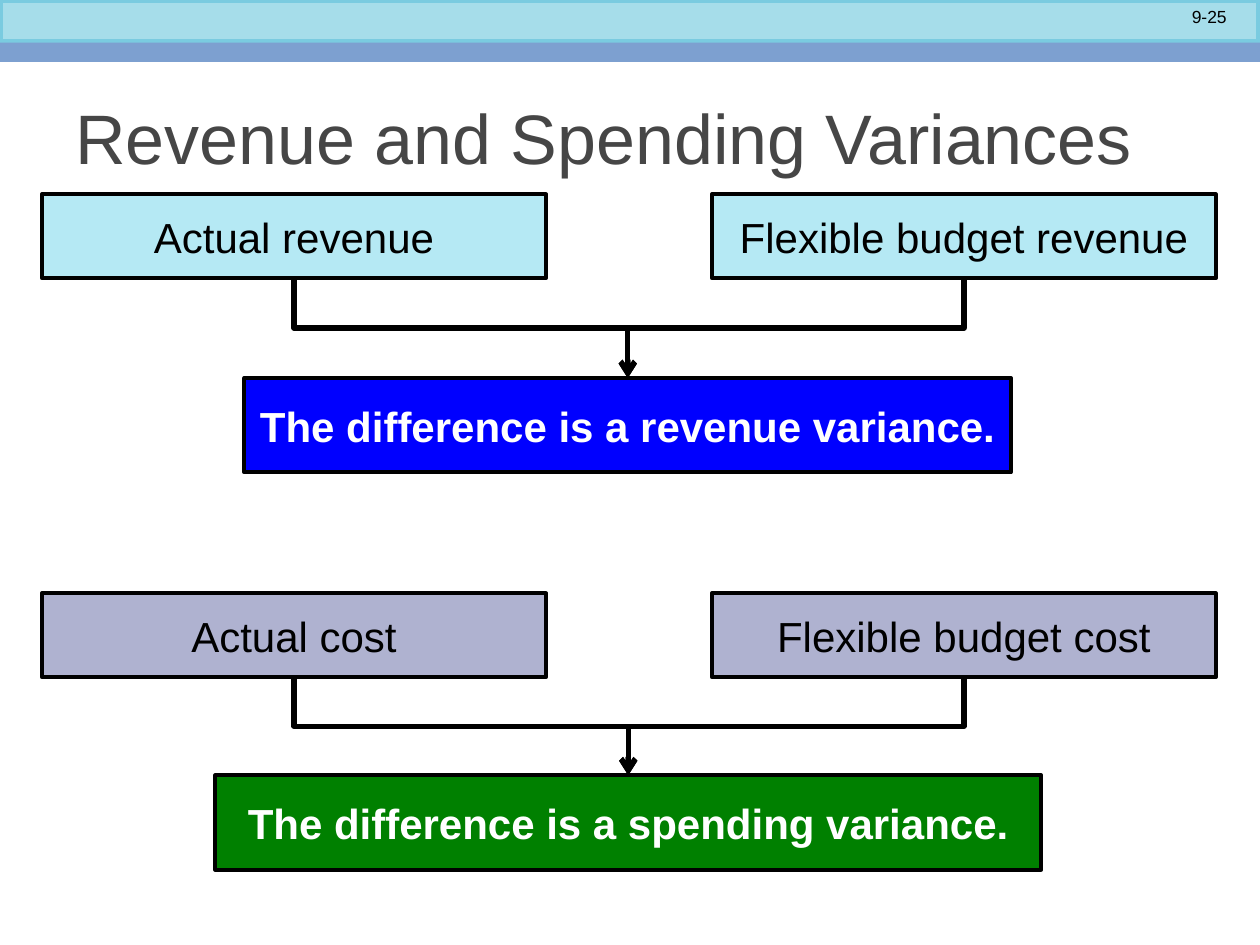
from lxml.etree import SubElement
from pptx import Presentation
from pptx.dml.color import RGBColor
from pptx.enum.shapes import MSO_CONNECTOR as Link, MSO_SHAPE as Preset
from pptx.enum.text import MSO_ANCHOR as Anchor, PP_ALIGN as Align
from pptx.oxml.ns import qn
from pptx.util import Pt

BOTTOM, TOP = 2, 0  # connection sites of a rectangle


def color(code):
    return RGBColor.from_string(code)


def apply(target, values):
    for name, value in values.items():
        setattr(target, name, value)


class VarianceSlide:
    font = "Arial"
    ink = "000000"
    border = 2.25
    link_width = 3

    def __init__(self, deck):
        self.shapes = deck.slides.add_slide(deck.slide_layouts[6]).shapes

    def set_text(self, shape, text, size, ink, align, anchor=Anchor.MIDDLE, bold=False):
        frame = shape.text_frame
        apply(frame, {"word_wrap": True, "vertical_anchor": anchor})
        paragraph = frame.paragraphs[0]
        paragraph.alignment = align
        run = paragraph.add_run()
        run.text = text
        apply(run.font, {"name": self.font, "size": Pt(size), "bold": bold})
        run.font.color.rgb = color(ink)

    def label(self, area, text, size, ink, align, anchor):
        box = self.shapes.add_textbox(*map(Pt, area))
        self.set_text(box, text, size, ink, align, anchor)

    def panel(self, area, fill, line=None, width=0):
        rect = self.shapes.add_shape(Preset.RECTANGLE, *map(Pt, area))
        rect.shadow.inherit = False
        rect.fill.solid()
        rect.fill.fore_color.rgb = color(fill)
        if line:
            rect.line.color.rgb = color(line)
            rect.line.width = Pt(width)
        else:
            rect.line.fill.background()
        return rect

    def box(self, area, text, fill, ink=ink, bold=False):
        rect = self.panel(area, fill, self.ink, self.border)
        self.set_text(rect, text, 24, ink, Align.CENTER, bold=bold)
        return rect

    def elbow(self, source, result):
        link = self.shapes.add_connector(Link.ELBOW, 0, 0, 0, 0)
        link.begin_connect(source, BOTTOM)
        link.end_connect(result, TOP)
        rightward = link.begin_x < link.end_x
        center_x = (link.begin_x + link.end_x) // 2
        center_y = (link.begin_y + link.end_y) // 2
        across, down = link.width, link.height
        # A quarter turn makes the elbow leave downwards
        apply(link, {"left": center_x - down // 2, "top": center_y - across // 2,
                     "width": down, "height": across})
        properties = link._element.spPr
        apply(properties.xfrm, {"rot": 270 if rightward else 90,
                                "flipH": rightward, "flipV": False})
        link.line.color.rgb = color(self.ink)
        link.line.width = Pt(self.link_width)
        SubElement(link.line._get_or_add_ln(), qn("a:tailEnd"), type="arrow")
        SubElement(properties, qn("a:effectLst"))

    def comparison(self, top, sources, fill, result_area, result, result_fill):
        boxes = [self.box((left, top, 288, 48), text, fill)
                 for left, text in zip((24, 406.8), sources)]
        outcome = self.box(result_area, result, result_fill, "FFFFFF", bold=True)
        for source in boxes:
            self.elbow(source, outcome)


def main():
    deck = Presentation()
    apply(deck, {"slide_width": Pt(720), "slide_height": Pt(540)})
    slide = VarianceSlide(deck)

    # Header bands and page number
    slide.panel((0, 0, 720, 24.5), "A6DDEA", "7ACBE0", 4)
    slide.panel((0, 28.8, 720, 6.6), "7DA0D0")
    slide.panel((0, 24.4, 720, 7.2), "7DA0D0")
    slide.label((612, 0, 96, 19.4), "9-25", 10, slide.ink, Align.RIGHT, Anchor.TOP)

    # Title
    slide.label((36, 36, 648, 84), "Revenue and Spending Variances", 40, "464646",
                Align.LEFT, Anchor.MIDDLE)

    # Revenue and cost comparisons
    slide.comparison(111, ("Actual revenue", "Flexible budget revenue"), "B5E9F4",
                     (139.7, 216, 438, 54),
                     "The difference is a revenue variance.", "0000FF")
    slide.comparison(339, ("Actual cost", "Flexible budget cost"), "AFB2D0",
                     (123, 443, 472, 54),
                     "The difference is a spending variance.", "008000")
    deck.save("out.pptx")


if __name__ == "__main__":
    main()
